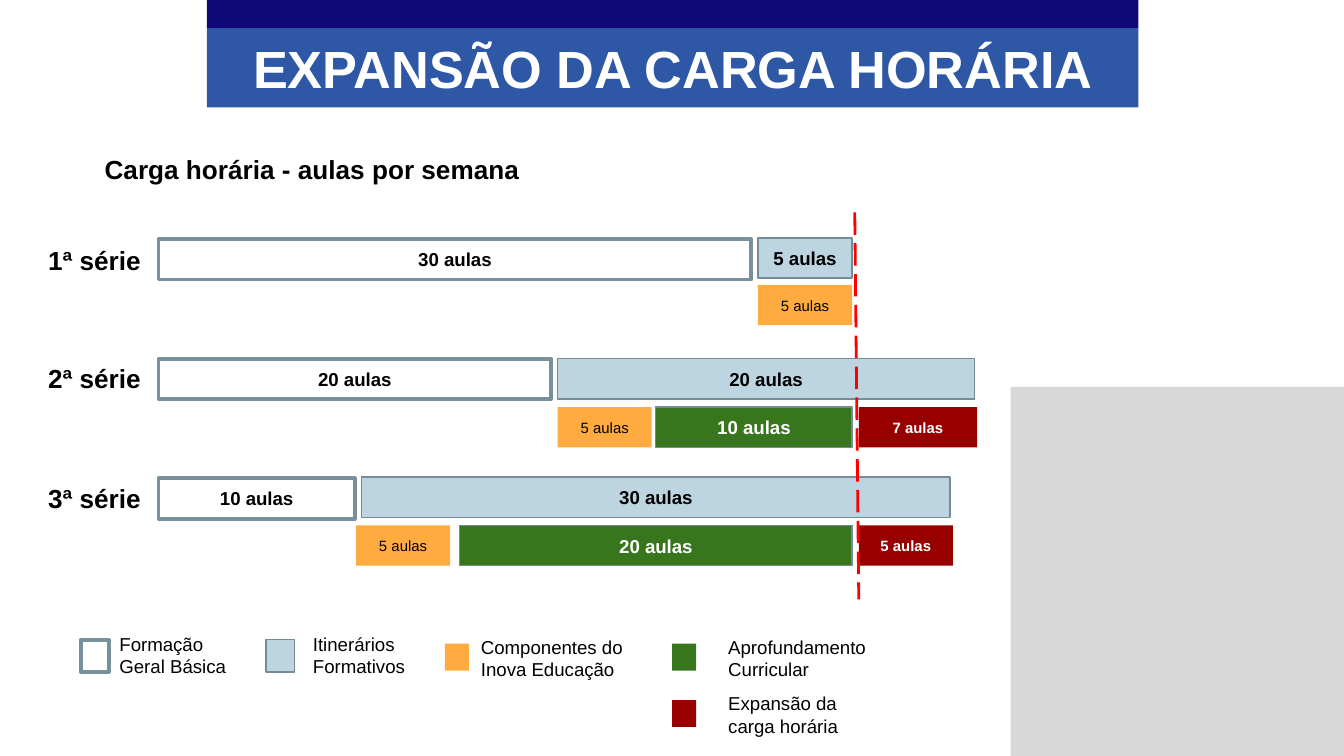
from dataclasses import dataclass
from typing import NamedTuple, Optional

from lxml import etree
from pptx import Presentation
from pptx.dml.color import RGBColor
from pptx.enum.dml import MSO_LINE
from pptx.enum.shapes import MSO_CONNECTOR, MSO_SHAPE
from pptx.enum.text import MSO_ANCHOR, PP_ALIGN
from pptx.oxml.ns import qn
from pptx.util import Inches, Pt

RECT = MSO_SHAPE.RECTANGLE
STRAIGHT = MSO_CONNECTOR.STRAIGHT
LONG_DASH = MSO_LINE.LONG_DASH
TOP, MIDDLE = MSO_ANCHOR.TOP, MSO_ANCHOR.MIDDLE
LEFT, CENTER = PP_ALIGN.LEFT, PP_ALIGN.CENTER
TITLE_ONLY = 5
WIDTH = 10
HEIGHT = WIDTH * 9 / 16


@dataclass(frozen=True)
class Theme:
    font: str = "Arial"
    black: str = "000000"
    white: str = "FFFFFF"
    navy: str = "110979"
    blue: str = "2E58A6"
    slate: str = "78909C"
    steel: str = "748C98"
    sky: str = "BDD5E1"
    amber: str = "FFAB40"
    green: str = "38761D"
    wine: str = "980000"
    red: str = "FF0000"
    gray: str = "BFBFBF"
    title: int = 28
    head: int = 14
    body: int = 10
    small: int = 8


T = Theme()


class Box(NamedTuple):
    x: float
    y: float
    w: float
    h: float


class Kind(NamedTuple):
    fill: str
    edge: Optional[str] = None
    width: float = 0
    ink: str = T.black
    size: int = T.body
    bold: bool = True


class Bar(NamedTuple):
    kind: Kind
    x: float
    y: float
    w: float
    count: int


class Key(NamedTuple):
    kind: Kind
    mark: Box
    area: Box
    text: str


BASE = Kind(T.white, T.slate, 2)
PATH = Kind(T.sky, T.steel, 0.75)
CORE = Kind(T.amber, size=T.small, bold=False)
DEPTH = Kind(T.green, T.steel, 0.75, T.white)
EXTRA = Kind(T.wine, ink=T.white, size=T.small)

START, LIMIT, BAR_H = 1.18, 6.39, 0.3

BARS = [
    Bar(BASE, START, 1.78, 4.41, 30),
    Bar(PATH, 5.64, 1.77, 0.7, 5),
    Bar(CORE, 5.64, 2.12, 0.7, 5),
    Bar(BASE, START, 2.67, 2.92, 20),
    Bar(PATH, 4.15, 2.67, 3.1, 20),
    Bar(CORE, 4.15, 3.03, 0.7, 5),
    Bar(DEPTH, 4.88, 3.03, 1.46, 10),
    Bar(EXTRA, LIMIT, 3.03, 0.88, 7),
    Bar(BASE, START, 3.56, 1.46, 10),
    Bar(PATH, 2.69, 3.55, 4.38, 30),
    Bar(CORE, 2.65, 3.91, 0.7, 5),
    Bar(DEPTH, 3.42, 3.91, 2.92, 20),
    Bar(EXTRA, LIMIT, 3.91, 0.7, 5),
]

# Legend swatch without an edge
PLAIN = DEPTH._replace(edge=None)

KEYS = [
    Key(BASE, Box(0.6, 4.76, 0.21, 0.24), Box(0.79, 4.66, 1.05, 0.42),
        "Formação\nGeral Básica"),
    Key(PATH, Box(1.98, 4.76, 0.21, 0.24), Box(2.23, 4.66, 0.98, 0.42),
        "Itinerários Formativos"),
    Key(CORE, Box(3.31, 4.79, 0.18, 0.2), Box(3.48, 4.68, 1.38, 0.42),
        "Componentes do Inova Educação"),
    Key(PLAIN, Box(5, 4.79, 0.18, 0.2), Box(5.32, 4.68, 1.38, 0.42),
        "Aprofundamento Curricular"),
    Key(EXTRA, Box(5, 5.21, 0.18, 0.2), Box(5.32, 5.1, 1.38, 0.42),
        "Expansão da carga horária"),
]


def color(code: str) -> RGBColor:
    return RGBColor.from_string(code)


def write(shape, text: str, *, size: int = T.body, ink: str = T.black,
          bold: bool = False, align=LEFT, anchor=TOP, pad: float = 0.05) -> None:
    """Fill a shape with text; each line becomes a paragraph."""
    frame = shape.text_frame
    frame.word_wrap = True
    frame.vertical_anchor = anchor
    frame.margin_left = frame.margin_right = Inches(0.1)
    frame.margin_top = frame.margin_bottom = Inches(pad)
    frame.text = text
    for para in frame.paragraphs:
        para.alignment = align
        para.line_spacing = 1.0
        para.space_before = Pt(0)
        for run in para.runs:
            font = run.font
            font.name, font.size, font.bold = T.font, Pt(size), bold
            font.color.rgb = color(ink)


def label(slide, box: Box, text: str, **style) -> None:
    write(slide.shapes.add_textbox(*map(Inches, box)), text, **style)


def block(slide, box: Box, kind: Kind):
    shape = slide.shapes.add_shape(RECT, *map(Inches, box))
    shape.shadow.inherit = False
    shape.fill.solid()
    shape.fill.fore_color.rgb = color(kind.fill)
    if kind.edge:
        shape.line.color.rgb = color(kind.edge)
        shape.line.width = Pt(kind.width)
    else:
        shape.line.fill.background()
    return shape


def draw_bar(slide, bar: Bar) -> None:
    kind = bar.kind
    shape = block(slide, Box(bar.x, bar.y, bar.w, BAR_H), kind)
    write(shape, f"{bar.count} aulas", size=kind.size, ink=kind.ink,
          bold=kind.bold, align=CENTER, anchor=MIDDLE)


def draw_key(slide, key: Key) -> None:
    block(slide, key.mark, key.kind)
    label(slide, key.area, key.text)


def draw_title(slide) -> None:
    title = slide.shapes.title
    title.left, title.top, title.width, title.height = map(
        Inches, Box(1.54, 0.21, 6.93, 0.59))
    title.fill.solid()
    title.fill.fore_color.rgb = color(T.blue)
    write(title, "EXPANSÃO DA CARGA HORÁRIA", size=T.title, ink=T.white,
          bold=True, align=CENTER, pad=0.06)
    block(slide, Box(1.54, 0, 6.93, 0.21), Kind(T.navy))


def draw_panel(slide) -> None:
    top = 2.88
    panel = block(slide, Box(7.52, top, 2.48, HEIGHT - top), Kind(T.gray))
    tint = panel.element.spPr.find(qn("a:solidFill"))[0]
    etree.SubElement(tint, qn("a:alpha")).set("val", "60000")


def draw_limit(slide) -> None:
    """Draw the dashed line that marks the regular weekly load."""
    line = slide.shapes.add_connector(
        STRAIGHT, Inches(6.36), Inches(1.58), Inches(LIMIT), Inches(4.46))
    line.line.color.rgb = color(T.red)
    line.line.width = Pt(1.5)
    line.line.dash_style = LONG_DASH
    etree.SubElement(line.element.spPr, qn("a:effectLst"))


def main() -> None:
    deck = Presentation()
    deck.slide_width, deck.slide_height = Inches(WIDTH), Inches(HEIGHT)
    slide = deck.slides.add_slide(deck.slide_layouts[TITLE_ONLY])
    draw_title(slide)
    label(slide, Box(0.68, 1.04, 7.53, 0.44), "Carga horária - aulas por semana",
          size=T.head, bold=True, pad=0.1)
    for year, y in enumerate((1.72, 2.6, 3.49), 1):
        label(slide, Box(0.26, y, 1.07, 0.44), f"{year}ª série",
              size=T.head, bold=True, pad=0.1)
    for bar in BARS:
        draw_bar(slide, bar)
    for key in KEYS:
        draw_key(slide, key)
    draw_panel(slide)
    draw_limit(slide)
    deck.save("out.pptx")


if __name__ == "__main__":
    main()
